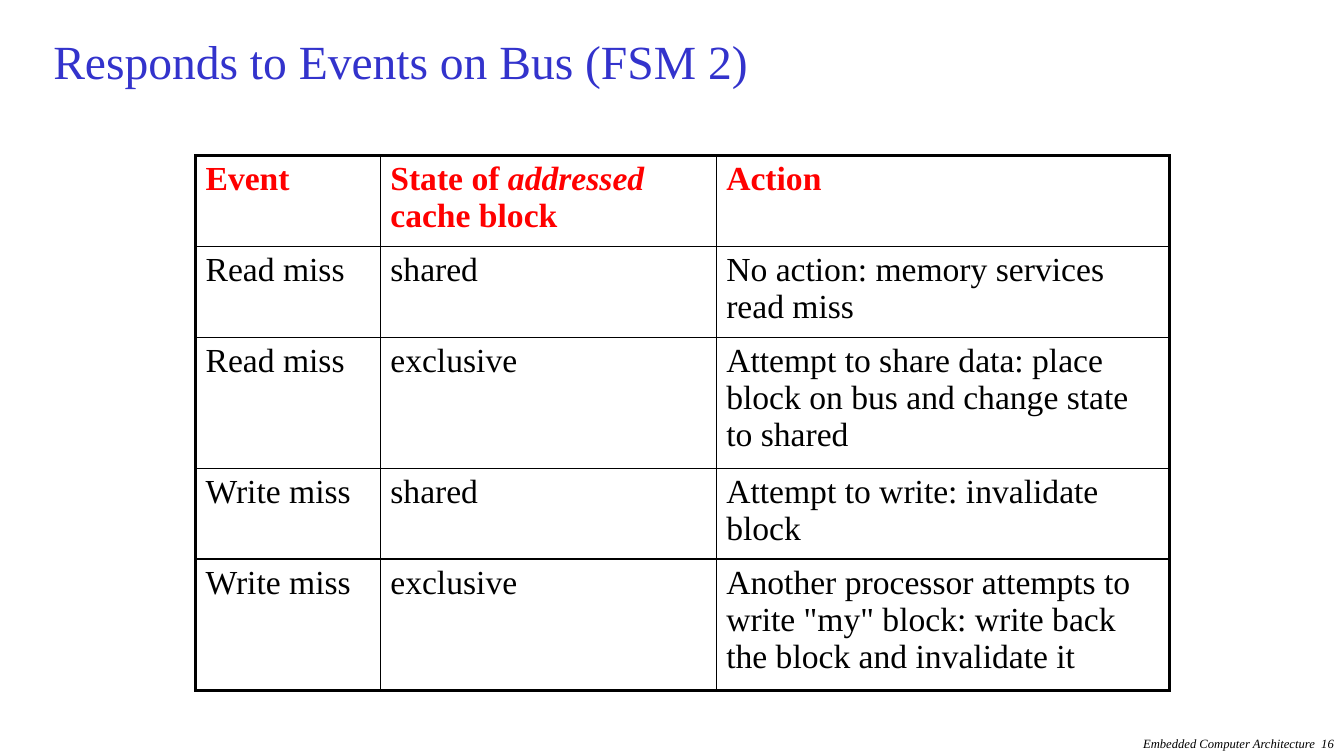
from lxml import etree
from pptx import Presentation
from pptx.dml.color import RGBColor
from pptx.enum.text import MSO_ANCHOR, PP_ALIGN
from pptx.oxml.ns import qn
from pptx.util import Inches, Pt

LEFT, RIGHT = PP_ALIGN.LEFT, PP_ALIGN.RIGHT
TOP, MIDDLE = MSO_ANCHOR.TOP, MSO_ANCHOR.MIDDLE

HEADER = ["Event", [("State of ", False), ("addressed", True), (" cache block", False)], "Action"]
EVENTS = [
    ["Read miss", "shared", "No action: memory services read miss"],
    ["Read miss", "exclusive",
     "Attempt to share data: place block on bus and change state to shared"],
    ["Write miss", "shared", "Attempt to write: invalidate block"],
    ["Write miss", "exclusive",
     'Another processor attempts to write "my" block: write back the block and invalidate it'],
]


def rgb(color):
    return RGBColor.from_string(color)


def write(tf, text, size=24, color="000000", bold=False, italic=False,
          align=LEFT, spacing=None, font="Times New Roman"):
    runs = [(text, italic)] if isinstance(text, str) else text
    p = tf.paragraphs[0]
    p.alignment = align
    p.line_spacing = spacing
    for content, slanted in runs:
        r = p.add_run()
        r.text = content
        r.font.name = font
        r.font.size = Pt(size)
        r.font.bold = bold
        r.font.italic = slanted
        r.font.color.rgb = rgb(color)


class Deck:
    title_color, header_color, line_color = "3333CC", "FF0000", "000000"
    thin, thick = 1, 2.25

    def __init__(self, columns=133.33, rows=75):
        self.prs = Presentation()
        self.prs.slide_width, self.prs.slide_height = Inches(13.33), Inches(7.5)
        self.col = self.prs.slide_width / columns
        self.row = self.prs.slide_height / rows
        self.s = self.prs.slides.add_slide(self.prs.slide_layouts[6])

    def box(self, left, top, width, height):
        return (round(left * self.col), round(top * self.row),
                round(width * self.col), round(height * self.row))

    def text(self, area, text, anchor=TOP, **style):
        tf = self.s.shapes.add_textbox(*self.box(*area)).text_frame
        tf.word_wrap = True
        tf.vertical_anchor = anchor
        write(tf, text, **style)

    def border(self, cell, side, width):
        ln = etree.SubElement(cell._tc.get_or_add_tcPr(), qn("a:ln" + side), w=str(Pt(width)))
        fill = etree.SubElement(ln, qn("a:solidFill"))
        etree.SubElement(fill, qn("a:srgbClr"), val=self.line_color)

    def table(self, left, top, widths, heights, data):
        area = self.box(left, top, sum(widths), sum(heights))
        table = self.s.shapes.add_table(len(heights), len(widths), *area).table
        table.first_row = table.horz_banding = False
        for column, width in zip(table.columns, widths):
            column.width = round(width * self.col)
        for row, height in zip(table.rows, heights):
            row.height = round(height * self.row)
        last_row, last_col = len(heights) - 1, len(widths) - 1
        for i, values in enumerate(data):
            for j, value in enumerate(values):
                cell = table.cell(i, j)
                outer = {"L": j == 0, "R": j == last_col, "T": i == 0, "B": i == last_row}
                for side, is_outer in outer.items():
                    self.border(cell, side, self.thick if is_outer else self.thin)
                cell.fill.background()
                write(cell.text_frame, value, bold=i == 0,
                      color=self.header_color if i == 0 else self.line_color)


def main():
    deck = Deck()
    deck.text((95, 72.5, 38.3, 2.5), "Embedded Computer Architecture  16",
              size=9, italic=True, align=RIGHT)
    deck.text((4.3, 2.5, 124.6, 8), "Responds to Events on Bus (FSM 2)", anchor=MIDDLE,
              size=34, color=deck.title_color, spacing=0.8)
    deck.table(19.4, 15.45, [18.33, 33.33, 45], [4.7, 4.9, 8.2, 4.9, 4.9], [HEADER] + EVENTS)
    deck.prs.save("out.pptx")


if __name__ == "__main__":
    main()
